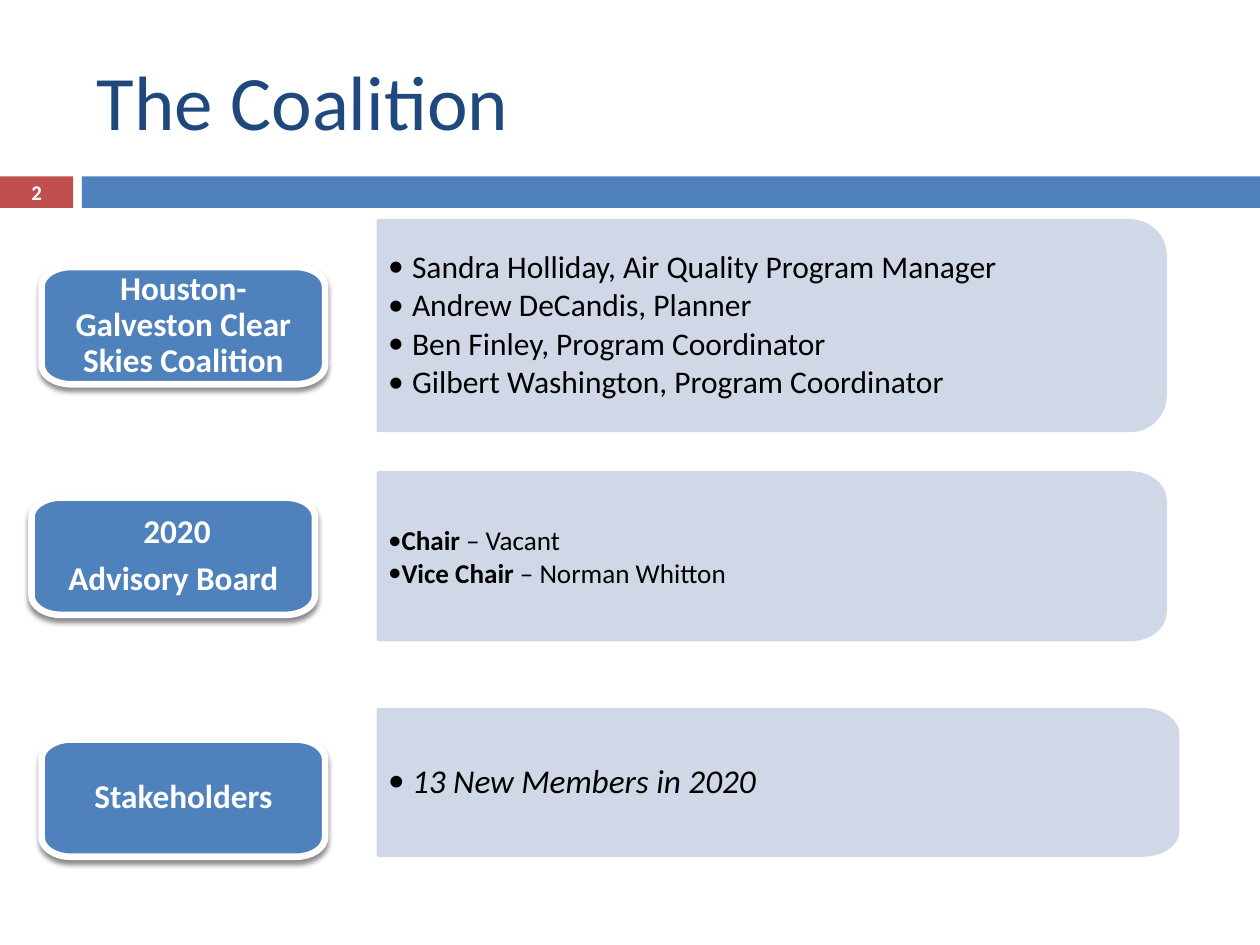
import pptx
import pptx.util
import pptx.dml.color
import pptx.enum.shapes
import pptx.enum.text
import pptx.oxml
import pptx.oxml.ns
from lxml import etree

Inches = pptx.util.Inches
Pt = pptx.util.Pt
ALIGN = pptx.enum.text.PP_ALIGN
qn = pptx.oxml.ns.qn

BLUE, RED, NAVY, PALE = "4F81BD", "C0504D", "1F497D", "D0D8E8"
WHITE, BLACK = "FFFFFF", "000000"
BEND = 0.45

PANEL = dict(pad=(0.08, 0.1, 0.14, 0.1), color=BLACK, bullet=True)
LIST = dict(indent=0.19, level=1, space=0.9, after=2.5)
LABEL = dict(pad=(0.15, 0.11, 0.15, 0.11), size=19, color=WHITE,
             bold=True, align=ALIGN.CENTER, space=0.9, after=6.5)

ROWS = [
    dict(panel=(3, 1.75, 6.25, 1.67), label=(0.33, 2.12, 2.25, 0.93),
         title=["Houston-Galveston Clear Skies Coalition"],
         items=["Sandra Holliday, Air Quality Program Manager",
                "Andrew DeCandis, Planner",
                "Ben Finley, Program Coordinator",
                "Gilbert Washington, Program Coordinator"],
         style=dict(LIST, size=18)),
    dict(panel=(3, 3.75, 6.25, 1.33), label=(0.25, 3.95, 2.25, 0.93),
         title=[" 2020", "Advisory Board"],
         items=[[("Chair", True), (" – Vacant", False)],
                [("Vice Chair ", True), ("– Norman Whitton", False)]],
         style=dict(size=15.5)),
    dict(panel=(3, 5.63, 6.35, 1.16), label=(0.33, 5.87, 2.25, 0.93),
         title=["Stakeholders"],
         items=["13 New Members in 2020"],
         style=dict(LIST, size=19, italic=True)),
]


def rgb(code):
    return pptx.dml.color.RGBColor.from_string(code)


def write(shape, paras, size=18, color=BLACK, bold=False, italic=False,
          align=ALIGN.LEFT, pad=(0.1, 0.05, 0.1, 0.05), space=1.0,
          after=0, bullet=False, indent=0, level=0):
    frame = shape.text_frame
    frame.word_wrap = True
    frame.vertical_anchor = pptx.enum.text.MSO_ANCHOR.MIDDLE
    (frame.margin_left, frame.margin_top,
     frame.margin_right, frame.margin_bottom) = map(Inches, pad)
    for n, runs in enumerate(paras):
        para = frame.add_paragraph() if n else frame.paragraphs[0]
        para.alignment = align
        para.level = level
        para.line_spacing = space
        para.space_after = Pt(after)
        if bullet:
            props = para._p.get_or_add_pPr()
            props.set("marL", str(Inches(indent)))
            props.set("indent", str(-Inches(indent)))
            etree.SubElement(props, qn("a:buFont")).set("typeface", "Calibri")
            etree.SubElement(props, qn("a:buChar")).set("char", "•")
        if isinstance(runs, str):
            runs = [(runs, bold)]
        for words, heavy in runs:
            run = para.add_run()
            run.text = words
            font = run.font
            font.name = "Calibri"
            font.size = Pt(size)
            font.bold = heavy
            font.italic = italic
            font.color.rgb = rgb(color)


def paint(shape, fill, line=None, width=0):
    shape.shadow.inherit = False
    shape.fill.solid()
    shape.fill.fore_color.rgb = rgb(fill)
    if line:
        shape.line.color.rgb = rgb(line)
        shape.line.width = Pt(width)
    else:
        shape.line.fill.background()


def shade(shape):
    effects = shape._element.spPr.find(qn("a:effectLst"))
    outer = etree.SubElement(
        effects, qn("a:outerShdw"), blurRad=str(Pt(3)), dist=str(Pt(2.4)),
        dir="5400000", algn="ctr", rotWithShape="0")
    tint = etree.SubElement(outer, qn("a:srgbClr"), val=BLACK)
    etree.SubElement(tint, qn("a:alpha"), val="45000")


def draw(track, tag, *points):
    step = etree.SubElement(track, qn(tag))
    for x, y in points:
        etree.SubElement(step, qn("a:pt"), x=str(Inches(x)), y=str(Inches(y)))


def rounded(box, right, left=0):
    x, y, w, h = box
    build = slide.shapes.build_freeform(Inches(x), Inches(y), scale=1.0)
    build.add_line_segments([(Inches(x + a), Inches(y + b))
                             for a, b in [(w, 0), (w, h), (0, h)]])
    shape = build.convert_to_shape()
    track = next(shape._element.spPr.iter(qn("a:path")))
    for step in list(track):
        track.remove(step)
    drop = h / 6
    corners = [(w, 0, (-right, 0), (0, drop)), (w, h, (0, -drop), (-right, 0)),
               (0, h, (left, 0), (0, -drop)), (0, 0, (0, drop), (left, 0))]
    tag = "a:moveTo"
    for cx, cy, (ax, ay), (bx, by) in corners:
        if (cx and right) or (not cx and left):
            draw(track, tag, (cx + ax, cy + ay))
            draw(track, "a:cubicBezTo",
                 (cx + ax * BEND, cy + ay * BEND),
                 (cx + bx * BEND, cy + by * BEND), (cx + bx, cy + by))
        else:
            draw(track, tag, (cx, cy))
        tag = "a:lnTo"
    draw(track, "a:close")
    return shape


def textbox(box, words, **style):
    write(slide.shapes.add_textbox(*map(Inches, box)), [words], **style)


deck = pptx.Presentation()
deck.slide_width, deck.slide_height = Inches(10), Inches(7.5)
slide = deck.slides.add_slide(deck.slide_layouts[6])

for left, width, fill in [(0, 0.58, RED), (0.65, 9.35, BLUE)]:
    bar = slide.shapes.add_shape(
        pptx.enum.shapes.MSO_SHAPE.RECTANGLE,
        *map(Inches, (left, 1.4, width, 0.25)))
    paint(bar, fill)

textbox((0.67, 0.25, 8.92, 1.08), "The Coalition", size=44, color=NAVY)
textbox((0, 1.39, 0.58, 0.27), "2", size=11.9, color=WHITE, bold=True,
        align=ALIGN.CENTER)

for row in ROWS:
    panel = rounded(row["panel"], 0.28)
    paint(panel, PALE, PALE, 1.5)
    write(panel, row["items"], **PANEL, **row["style"])
    label = rounded(row["label"], 0.23, 0.23)
    paint(label, BLUE, WHITE, 3.75)
    shade(label)
    write(label, row["title"], **LABEL)

deck.save("out.pptx")
